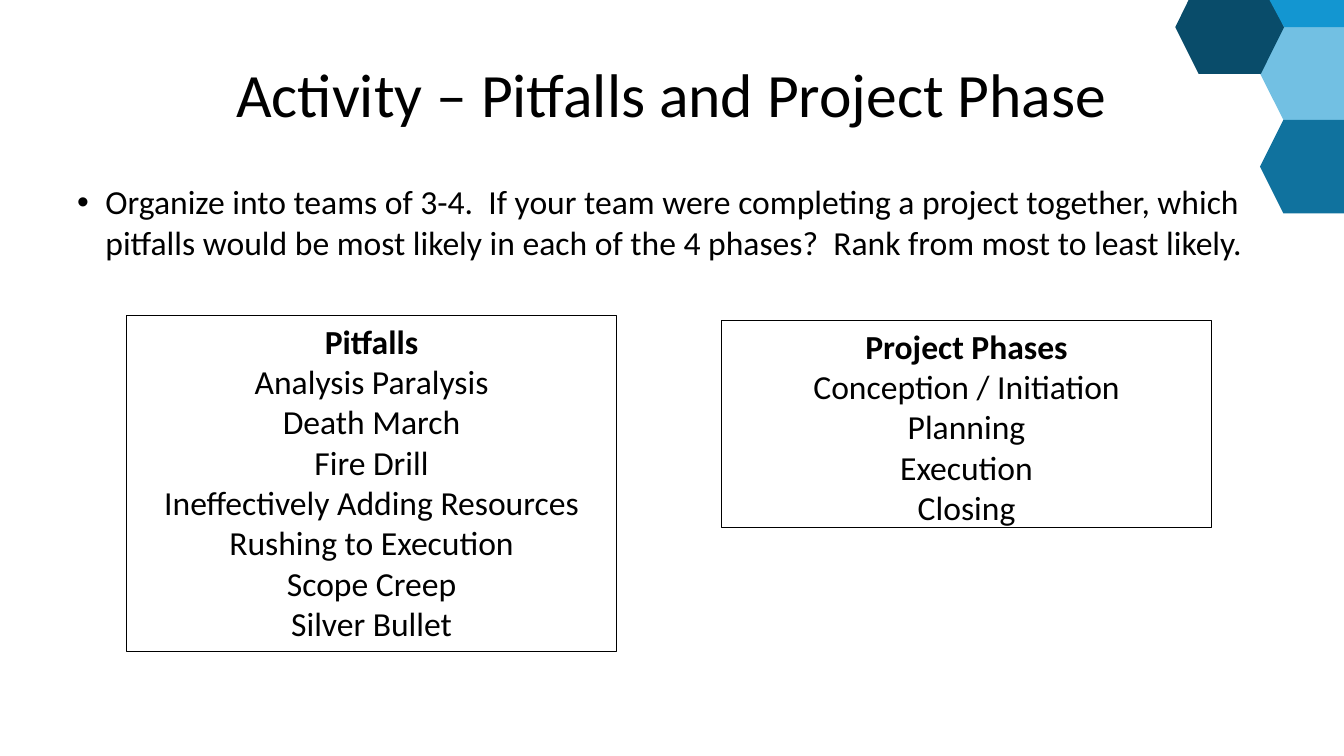
import pptx
import pptx.util
import pptx.dml.color
import pptx.enum.shapes
import pptx.enum.text
import pptx.oxml.ns
import lxml.etree

Pt = pptx.util.Pt
BLACK = pptx.dml.color.RGBColor(0x00, 0x00, 0x00)
LIGHT_BLUE = pptx.dml.color.RGBColor(0x72, 0xC0, 0xE3)
MID_BLUE = pptx.dml.color.RGBColor(0x10, 0x72, 0x9E)
DARK_BLUE = pptx.dml.color.RGBColor(0x09, 0x4C, 0x6A)
BRIGHT_BLUE = pptx.dml.color.RGBColor(0x13, 0x96, 0xD1)
CENTER = pptx.enum.text.PP_ALIGN.CENTER
TOP = pptx.enum.text.MSO_ANCHOR.TOP
MIDDLE = pptx.enum.text.MSO_ANCHOR.MIDDLE


def set_up_frame(box, anchor, inset_x, inset_y):
    frame = box.text_frame
    frame.word_wrap = True
    frame.vertical_anchor = anchor
    frame.margin_left = frame.margin_right = Pt(inset_x)
    frame.margin_top = frame.margin_bottom = Pt(inset_y)
    return frame


def add_span(para, text, size, bold=False):
    span = para.add_run()
    span.text = text
    span.font.name = "Calibri"
    span.font.size = Pt(size)
    span.font.bold = bold
    span.font.color.rgb = BLACK


deck = pptx.Presentation()
deck.slide_width = Pt(960)
deck.slide_height = Pt(540)
page = deck.slides.add_slide(deck.slide_layouts[6])

hexagons = [
    (LIGHT_BLUE, [(900, 52.5), (916.7, 19), (960, 19), (960, 85.6), (916.7, 85.6)]),
    (MID_BLUE, [(900, 119), (916.7, 85.6), (960, 85.6), (960, 152.4), (916.7, 152.4)]),
    (DARK_BLUE, [(839.5, 19.4), (849, 0), (908, 0), (917.2, 19.4), (900.6, 52.8), (856.2, 52.8)]),
    (BRIGHT_BLUE, [(906.8, 0), (960, 0), (960, 19.4), (917.2, 19.4)]),
]
for color, corners in hexagons:
    points = [(Pt(x), Pt(y)) for x, y in corners]
    builder = page.shapes.build_freeform(*points[0])
    builder.add_line_segments(points[1:], close=True)
    hexagon = builder.convert_to_shape()
    hexagon.shadow.inherit = False
    hexagon.fill.solid()
    hexagon.fill.fore_color.rgb = color
    hexagon.line.fill.background()

task_box = page.shapes.add_textbox(Pt(48), Pt(126), Pt(864), Pt(95))
para = set_up_frame(task_box, TOP, 7.2, 3.6).paragraphs[0]
properties = para._p.get_or_add_pPr()
properties.set("marL", str(Pt(20.25)))
properties.set("indent", str(-Pt(20.25)))
bullet_font = lxml.etree.SubElement(properties, pptx.oxml.ns.qn("a:buFont"))
bullet_font.set("typeface", "Arial")
bullet = lxml.etree.SubElement(properties, pptx.oxml.ns.qn("a:buChar"))
bullet.set("char", "•")
add_span(
    para,
    "Organize into teams of 3-4.  If your team were completing a project together, "
    "which pitfalls would be most likely in each of the 4 phases?  "
    "Rank from most to least likely.",
    24,
)

title_box = page.shapes.add_textbox(Pt(48), Pt(21.6), Pt(864), Pt(90))
para = set_up_frame(title_box, MIDDLE, 7.2, 3.6).paragraphs[0]
para.alignment = CENTER
add_span(para, "Activity – Pitfalls and Project Phase", 44)

lists = [
    (90.4, 225.4, 240, [
        "Pitfalls",
        "Analysis Paralysis",
        "Death March",
        "Fire Drill",
        "Ineffectively Adding Resources",
        "Rushing to Execution",
        "Scope Creep",
        "Silver Bullet",
    ]),
    (515.4, 229, 147.6, [
        "Project Phases",
        "Conception / Initiation",
        "Planning",
        "Execution",
        "Closing",
    ]),
]
for left, top, height, entries in lists:
    list_box = page.shapes.add_shape(
        pptx.enum.shapes.MSO_SHAPE.RECTANGLE, Pt(left), Pt(top), Pt(350), Pt(height)
    )
    list_box.shadow.inherit = False
    list_box.fill.background()
    list_box.line.color.rgb = BLACK
    list_box.line.width = Pt(0.75)
    frame = set_up_frame(list_box, TOP, 3.6, 3.6)
    for index, entry in enumerate(entries):
        para = frame.add_paragraph() if index else frame.paragraphs[0]
        para.alignment = CENTER
        add_span(para, entry, 24, bold=index == 0)

deck.save("out.pptx")
